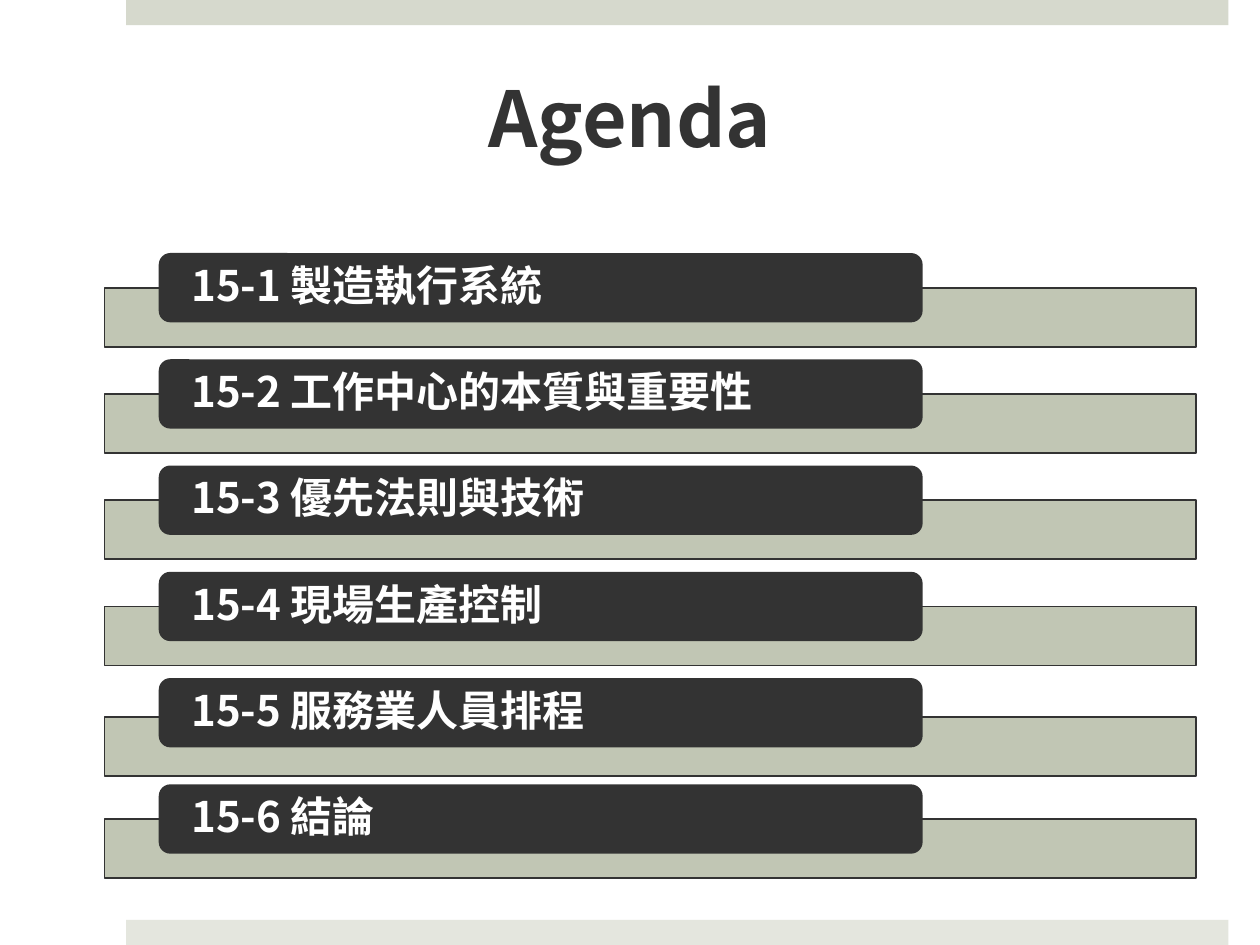
from dataclasses import dataclass

from lxml import etree
from pptx import Presentation
from pptx.dml.color import RGBColor
from pptx.enum.shapes import MSO_SHAPE
from pptx.enum.text import MSO_ANCHOR, PP_ALIGN
from pptx.oxml.ns import qn
from pptx.util import Pt

RECT = MSO_SHAPE.RECTANGLE
ROUND = MSO_SHAPE.ROUNDED_RECTANGLE
MIDDLE = MSO_ANCHOR.MIDDLE
LEFT = PP_ALIGN.LEFT
CENTER = PP_ALIGN.CENTER


@dataclass(frozen=True)
class Theme:
    font: str = "Noto Sans CJK SC"
    dark: str = "333333"
    white: str = "FFFFFF"
    sage: str = "BBC0AC"
    head: str = "D6D9CD"
    foot: str = "E4E6DE"
    title: int = 44
    item: int = 24


THEME = Theme()
TOPICS = (
    "15-1 製造執行系統",
    "15-2 工作中心的本質與重要性",
    "15-3 優先法則與技術",
    "15-4 現場生產控制",
    "15-5 服務業人員排程",
    "15-6 結論",
)
TOP = 144.6
PITCH = 60.72
DROP = 19.8
NUDGE = {4: 2.3}


def add_box(slide, kind, box, fill, line=None, alpha=None):
    shape = slide.shapes.add_shape(kind, *map(Pt, box))
    shape.shadow.inherit = False
    shape.fill.solid()
    shape.fill.fore_color.rgb = RGBColor.from_string(fill)
    if alpha:
        color = shape.fill._xPr.find(".//" + qn("a:srgbClr"))
        etree.SubElement(color, qn("a:alpha"), val=str(alpha * 1000))
    if line:
        shape.line.color.rgb = RGBColor.from_string(line)
        shape.line.width = Pt(1)
    else:
        shape.line.fill.background()


def add_text(slide, text, box, size, color, align=LEFT, inset=(7.2, 3.6),
             lead=1.0, after=0):
    frame = slide.shapes.add_textbox(*map(Pt, box)).text_frame
    frame.word_wrap = True
    frame.vertical_anchor = MIDDLE
    frame.margin_left = frame.margin_right = Pt(inset[0])
    frame.margin_top = frame.margin_bottom = Pt(inset[1])
    para = frame.paragraphs[0]
    para.alignment = align
    para.line_spacing = lead
    para.space_after = Pt(after)
    run = para.add_run()
    run.text = text
    font = run.font
    font.name = THEME.font
    font.size = Pt(size)
    font.bold = True
    font.color.rgb = RGBColor.from_string(color)
    etree.SubElement(font._element, qn("a:ea"), typeface=THEME.font)


def add_topic(slide, index, text):
    top = TOP + index * PITCH
    bar = top + DROP + NUDGE.get(index, 0)
    add_box(slide, RECT, (59.8, bar, 623.5, 33.8), THEME.sage,
            line=THEME.dark, alpha=90)
    add_box(slide, ROUND, (90.7, top, 436.5, 39.6), THEME.dark)
    add_text(slide, text, (92.9, top + 1.9, 432.7, 35.8), THEME.item,
             THEME.white, inset=(16.5, 0), lead=0.9, after=8.4)


def main():
    deck = Presentation()
    deck.slide_width, deck.slide_height = Pt(720), Pt(540)
    slide = deck.slides.add_slide(deck.slide_layouts[6])
    add_box(slide, RECT, (72, 0, 630, 14.4), THEME.head)
    add_box(slide, RECT, (72, 525.6, 630, 14.4), THEME.foot)
    for index, text in enumerate(TOPICS):
        add_topic(slide, index, text)
    add_text(slide, "Agenda", (36, 21.6, 648, 90), THEME.title, THEME.dark,
             align=CENTER)
    deck.save("out.pptx")


if __name__ == "__main__":
    main()
